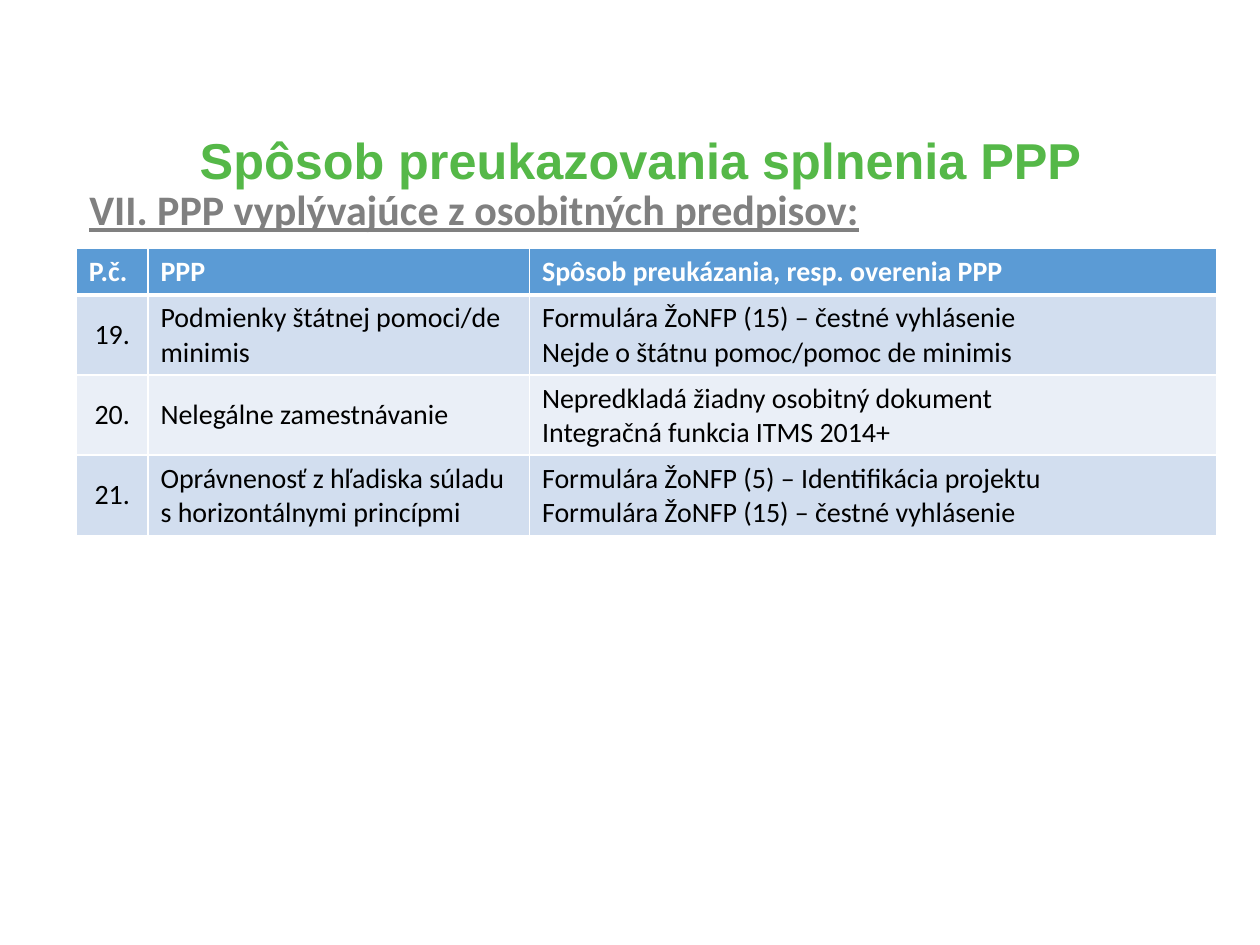
from pptx import Presentation
from pptx.dml.color import RGBColor
from pptx.enum.text import MSO_ANCHOR as Anchor, PP_ALIGN as Align
from pptx.oxml import parse_xml
from pptx.oxml.ns import nsdecls
from pptx.util import Pt

GREEN, GREY, BLACK, WHITE = "55B848", "808080", "000000", "FFFFFF"
HEADER_FILL, BAND_FILLS = "5B9BD5", ("D2DEEF", "EAEFF7")

COLUMN_WIDTHS = (41, 218, 392.6)
HEADER_HEIGHT, ROW_HEIGHT = 26.6, 45.8
ROWS = (
    ("P.č.", "PPP", "Spôsob preukázania, resp. overenia PPP"),
    ("19.", "Podmienky štátnej pomoci/de minimis",
     "Formulára ŽoNFP (15) – čestné vyhlásenie\nNejde o štátnu pomoc/pomoc de minimis"),
    ("20.", "Nelegálne zamestnávanie",
     "Nepredkladá žiadny osobitný dokument\nIntegračná funkcia ITMS 2014+"),
    ("21.", "Oprávnenosť z hľadiska súladu s horizontálnymi princípmi",
     "Formulára ŽoNFP (5) – Identifikácia projektu\nFormulára ŽoNFP (15) – čestné vyhlásenie"),
)


def color(hex_string):
    return RGBColor.from_string(hex_string)


class SlideBuilder:
    def __init__(self, slide, body_font="Calibri"):
        self.slide = slide
        self.body_font = body_font

    def style(self, text_frame, size, hex_color, bold=False, underline=False,
              align=Align.LEFT, font_name=None):
        for paragraph in text_frame.paragraphs:
            paragraph.alignment = align
            for run in paragraph.runs:
                run.font.name = font_name or self.body_font
                run.font.size = Pt(size)
                run.font.bold = bold
                run.font.underline = underline
                run.font.color.rgb = color(hex_color)

    def text(self, content, left, top, width, height, anchor=Anchor.TOP,
             line_spacing=1.0, **style):
        box = self.slide.shapes.add_textbox(Pt(left), Pt(top), Pt(width), Pt(height))
        text_frame = box.text_frame
        text_frame.word_wrap = True
        text_frame.vertical_anchor = anchor
        text_frame.text = content
        text_frame.paragraphs[0].line_spacing = line_spacing
        self.style(text_frame, **style)

    def borders(self, cell, **widths):
        properties = cell._tc.get_or_add_tcPr()
        for side in "LRTB":
            properties.append(parse_xml(
                f'<a:ln{side} {nsdecls("a")} w="{Pt(widths.get(side, 1))}">'
                f'<a:solidFill><a:srgbClr val="{WHITE}"/></a:solidFill></a:ln{side}>'))

    def table(self, rows, left, top, column_widths, row_heights, size):
        frame = self.slide.shapes.add_table(
            len(rows), len(column_widths), Pt(left), Pt(top),
            Pt(sum(column_widths)), Pt(sum(row_heights)))
        table = frame.table
        for column, width in zip(table.columns, column_widths):
            column.width = Pt(width)
        for row_index, (values, height) in enumerate(zip(rows, row_heights)):
            table.rows[row_index].height = Pt(height)
            is_header = row_index == 0
            fill = HEADER_FILL if is_header else BAND_FILLS[(row_index - 1) % 2]
            for column_index, value in enumerate(values):
                cell = table.cell(row_index, column_index)
                self.borders(cell, B=3 if is_header else 1, T=3 if row_index == 1 else 1)
                cell.fill.solid()
                cell.fill.fore_color.rgb = color(fill)
                cell.vertical_anchor = Anchor.TOP if is_header else Anchor.MIDDLE
                cell.text_frame.text = value
                is_number = column_index == 0 and not is_header
                self.style(cell.text_frame, size, WHITE if is_header else BLACK,
                           bold=is_header, align=Align.CENTER if is_number else Align.LEFT)


def main():
    presentation = Presentation()
    presentation.slide_width, presentation.slide_height = Pt(720), Pt(540)
    builder = SlideBuilder(presentation.slides.add_slide(presentation.slide_layouts[6]))
    builder.text("Spôsob preukazovania splnenia PPP", 44, 73.4, 644.4, 39.6,
                 anchor=Anchor.MIDDLE, line_spacing=0.9, size=28.8, hex_color=GREEN,
                 bold=True, align=Align.CENTER, font_name="Arial")
    builder.text("VII. PPP vyplývajúce z osobitných predpisov:", 44, 101.5, 614.2, 36,
                 size=24, hex_color=GREY, bold=True, underline=True, align=Align.JUSTIFY)
    row_heights = [HEADER_HEIGHT] + [ROW_HEIGHT] * (len(ROWS) - 1)
    builder.table(ROWS, 43.6, 142, COLUMN_WIDTHS, row_heights, size=16)
    presentation.save("out.pptx")


if __name__ == "__main__":
    main()
